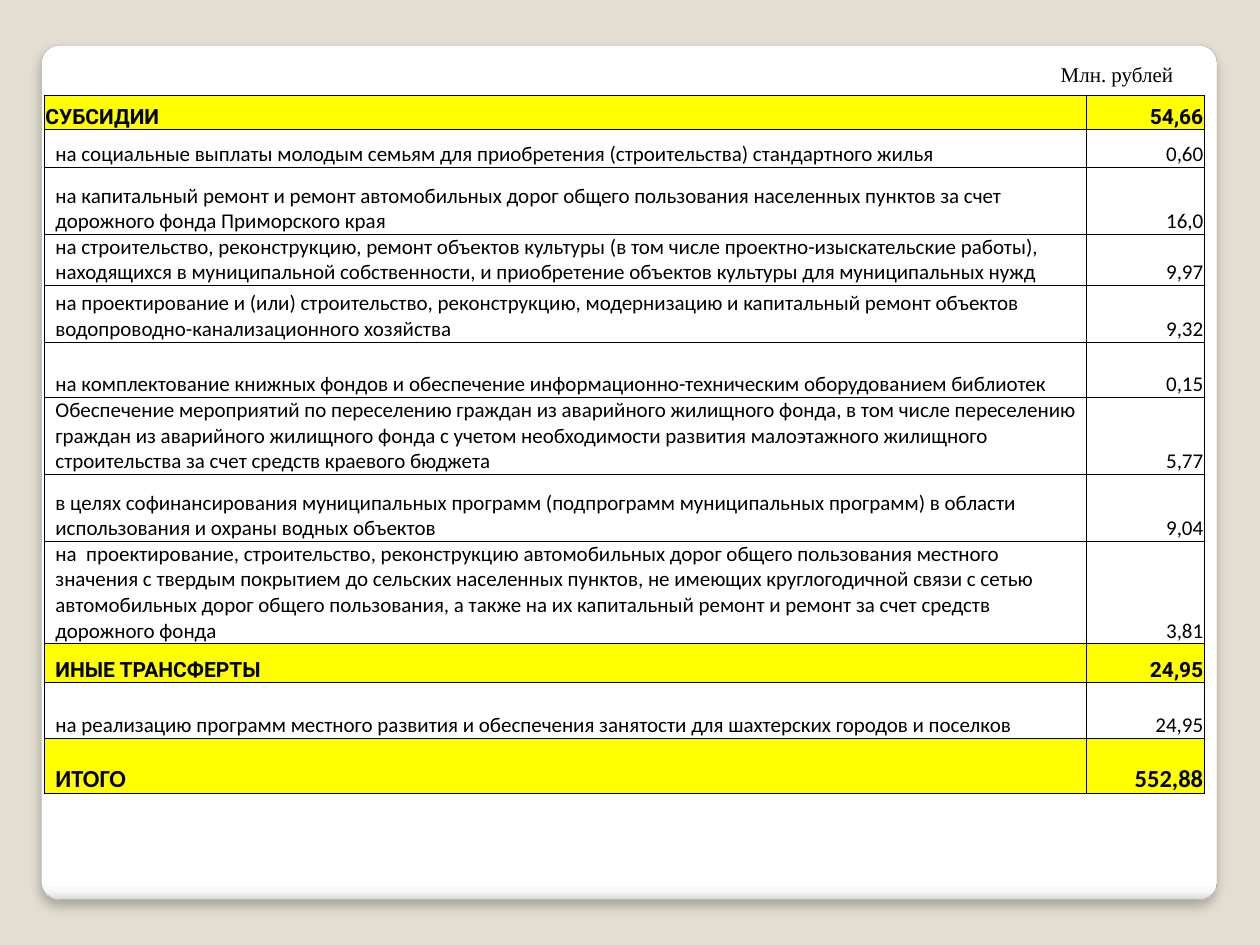
"""Build a slide with a table of subsidies and other transfers."""
from dataclasses import dataclass

from lxml import etree
from pptx import Presentation
from pptx.dml.color import RGBColor
from pptx.enum import shapes, text
from pptx.oxml import ns, parse_xml
from pptx.util import Inches, Pt

BLACK, YELLOW = "000000", "FFFF00"
COLUMN_WIDTHS = (8.27, 0.94)


@dataclass
class Entry:
    label: str
    amount: str
    height: float
    font: str = "Calibri"
    size: int = 12
    heading: bool = False
    indent: float = 0.09
    edge: float = 0.01


ENTRIES = [
    Entry("СУБСИДИИ", "54,66", 0.27, "Roboto", heading=True, indent=0.01),
    Entry("на социальные выплаты молодым семьям для приобретения (строительства) "
          "стандартного жилья", "0,60", 0.3),
    Entry("на капитальный ремонт и ремонт автомобильных дорог общего пользования "
          "населенных пунктов за счет дорожного фонда Приморского края",
          "16,0", 0.53, edge=0),
    Entry("на строительство, реконструкцию, ремонт объектов культуры (в том числе "
          "проектно-изыскательские работы), находящихся в муниципальной собственности, "
          "и приобретение объектов культуры для муниципальных нужд",
          "9,97", 0.3, edge=0),
    Entry("на проектирование и (или) строительство, реконструкцию, модернизацию и "
          "капитальный ремонт объектов водопроводно-канализационного хозяйства",
          "9,32", 0.45, edge=0),
    Entry("на комплектование книжных фондов и обеспечение информационно-техническим "
          "оборудованием библиотек", "0,15", 0.44, edge=0),
    Entry("Обеспечение мероприятий по переселению граждан из аварийного жилищного "
          "фонда, в том числе переселению граждан из аварийного жилищного фонда с "
          "учетом необходимости развития малоэтажного жилищного строительства за счет "
          "средств краевого бюджета", "5,77", 0.47, edge=0),
    Entry("в целях софинансирования муниципальных программ (подпрограмм муниципальных "
          "программ) в области использования и охраны водных объектов",
          "9,04", 0.53, edge=0),
    Entry("на  проектирование, строительство, реконструкцию автомобильных дорог общего "
          "пользования местного значения с твердым покрытием до сельских населенных "
          "пунктов, не имеющих круглогодичной связи с сетью автомобильных дорог общего "
          "пользования, а также на их капитальный ремонт и ремонт за счет средств "
          "дорожного фонда", "3,81", 0.47, edge=0),
    Entry("ИНЫЕ ТРАНСФЕРТЫ", "24,95", 0.31, "Roboto", heading=True),
    Entry("на реализацию программ местного развития и обеспечения занятости для "
          "шахтерских городов и поселков", "24,95", 0.44),
    Entry("ИТОГО", "552,88", 0.44, size=14, heading=True),
]


def color(value: str) -> RGBColor:
    return RGBColor.from_string(value)


def add_span(para, words: str, font: str, size: int, bold: bool = False) -> None:
    span = para.add_run()
    span.text = words
    span.font.name, span.font.size, span.font.bold = font, Pt(size), bold
    span.font.color.rgb = color(BLACK)


def add_card(page) -> None:
    card = page.shapes.add_shape(shapes.MSO_SHAPE.ROUNDED_RECTANGLE, Inches(0.33),
                                 Inches(0.36), Inches(9.33), Inches(6.78))
    card.adjustments[0] = 0.021
    card.line.color.rgb = color("A4A4A4")
    card.line.width = Pt(0.16)
    card.fill.gradient()
    card.fill.gradient_angle = 270
    stops = card.fill._fill._gradFill.find(ns.qn("a:gsLst"))
    for stop in list(stops):
        stops.remove(stop)
    for place, shade in ((0, "FFFFFF"), (98, "FFFFFF"), (99, "F7F7F7"), (100, "DADADA")):
        stop = etree.SubElement(stops, ns.qn("a:gs"), pos=str(place * 1000))
        etree.SubElement(stop, ns.qn("a:srgbClr"), val=shade)
    card.shadow.inherit = False
    effects = card._element.spPr.find(ns.qn("a:effectLst"))
    effects.append(parse_xml(
        f'<a:outerShdw {ns.nsdecls("a")} blurRad="{Pt(6)}" dist="{Pt(4)}" dir="5400000" '
        f'algn="t" rotWithShape="0"><a:srgbClr val="{BLACK}"><a:alpha val="25000"/>'
        '</a:srgbClr></a:outerShdw>'))


def add_borders(cell) -> None:
    properties = cell._tc.get_or_add_tcPr()
    for index, side in enumerate("LRTB"):
        properties.insert(index, parse_xml(
            f'<a:ln{side} {ns.nsdecls("a")} w="{Pt(0.5)}"><a:solidFill>'
            f'<a:srgbClr val="{BLACK}"/></a:solidFill></a:ln{side}>'))


def fill_cell(cell, words: str, entry: Entry, indent: float, edge: float, align) -> None:
    cell.vertical_anchor = text.MSO_ANCHOR.BOTTOM
    cell.margin_left, cell.margin_bottom = Inches(indent), 0
    cell.margin_top = cell.margin_right = Inches(edge)
    if entry.heading:
        cell.fill.solid()
        cell.fill.fore_color.rgb = color(YELLOW)
    else:
        cell.fill.background()
    add_borders(cell)
    para = cell.text_frame.paragraphs[0]
    para.alignment = align
    add_span(para, words, entry.font, entry.size, entry.heading)


def add_entries(page, entries: list[Entry]) -> None:
    height = sum(entry.height for entry in entries)
    table = page.shapes.add_table(len(entries), len(COLUMN_WIDTHS), Inches(0.35), Inches(0.76),
                                  Inches(sum(COLUMN_WIDTHS)), Inches(height)).table
    table.first_row = table.horz_banding = False
    for column, width in zip(table.columns, COLUMN_WIDTHS):
        column.width = Inches(width)
    for row, entry in zip(table.rows, entries):
        row.height = Inches(entry.height)
        label, amount = row.cells
        fill_cell(label, entry.label, entry, entry.indent, entry.edge, text.PP_ALIGN.LEFT)
        fill_cell(amount, entry.amount, entry, 0.01, 0.01, text.PP_ALIGN.RIGHT)


def add_unit(page) -> None:
    box = page.shapes.add_textbox(Inches(8.23), Inches(0.44), Inches(1.18), Inches(0.3))
    box.text_frame.word_wrap = True
    para = box.text_frame.paragraphs[0]
    para.alignment = text.PP_ALIGN.RIGHT
    add_span(para, "Млн. рублей", "Times New Roman", 12)


def main() -> None:
    deck = Presentation()
    deck.slide_width, deck.slide_height = Inches(10), Inches(7.5)
    page = deck.slides.add_slide(deck.slide_layouts[6])
    page.background.fill.solid()
    page.background.fill.fore_color.rgb = color("E3DED1")
    add_card(page)
    add_entries(page, ENTRIES)
    add_unit(page)
    deck.save("out.pptx")


if __name__ == "__main__":
    main()
